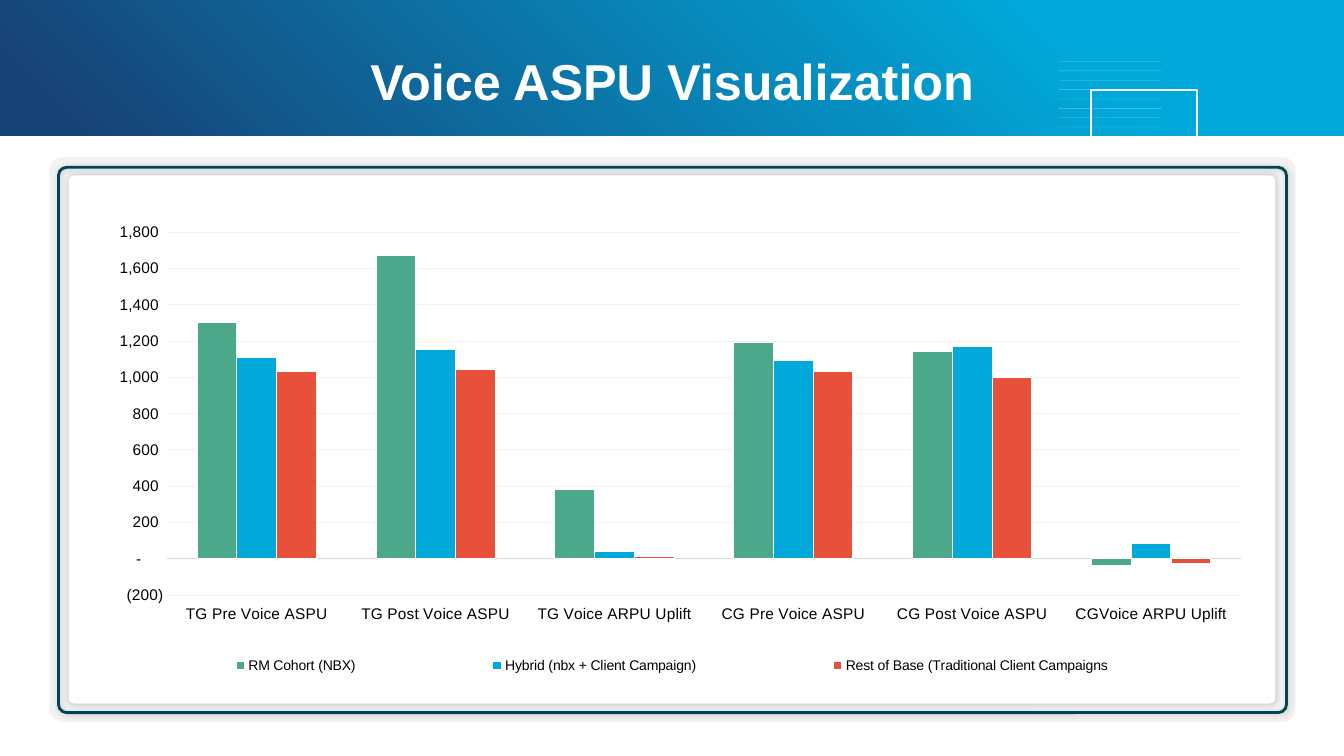
import pptx
import pptx.chart.data
import pptx.dml.color
import pptx.enum.chart
import pptx.enum.shapes
import pptx.enum.text
import pptx.oxml
import pptx.oxml.ns
import pptx.util
from lxml import etree
from pptx.util import Inches, Pt

FONT = "Arial"
COLORS = {
    "navy": "174276", "sky": "00A9DA", "white": "FFFFFF", "black": "000000",
    "mat": "F2F2F2", "frame": "004554", "axis": "D9D9D9",
    "green": "4CA88A", "red": "E7513C",
}
CATEGORIES = [
    "TG Pre Voice ASPU", "TG Post Voice ASPU", "TG Voice ARPU Uplift",
    "CG Pre Voice ASPU", "CG Post Voice ASPU", "CGVoice ARPU Uplift",
]
SERIES = [
    ("RM Cohort (NBX)", "green", (1300, 1670, 380, 1190, 1140, -40)),
    ("Hybrid (nbx + Client Campaign)", "sky", (1110, 1150, 40, 1090, 1170, 80)),
    ("Rest of Base (Traditional Client Campaigns", "red", (1030, 1040, 10, 1030, 1000, -30)),
]
NUMBER_FORMAT = '_(* #,##0_);_(* \\(#,##0\\);_(* "-"??_);_(@_)'
NAMESPACE = pptx.oxml.ns.nsdecls("a")


def rgb(name):
    return pptx.dml.color.RGBColor.from_string(COLORS[name])


def style_line(line, color, width):
    line.color.rgb = rgb(color)
    line.width = Pt(width)


def style_font(font, size, color="black", bold=False):
    font.name, font.size, font.bold = FONT, Pt(size), bold
    font.color.rgb = rgb(color)


def add_box(slide, box, fill=None, line=None, width=1, radius=None, shadow=False):
    kinds = pptx.enum.shapes.MSO_SHAPE
    kind = kinds.RECTANGLE if radius is None else kinds.ROUNDED_RECTANGLE
    shape = slide.shapes.add_shape(kind, *map(Inches, box))
    shape.shadow.inherit = False
    if radius is not None:
        shape.adjustments[0] = radius
    if fill:
        shape.fill.solid()
        shape.fill.fore_color.rgb = rgb(fill)
    else:
        shape.fill.background()
    if line:
        style_line(shape.line, line, width)
    else:
        shape.line.fill.background()
    if shadow:
        effects = shape._element.spPr.find(pptx.oxml.ns.qn("a:effectLst"))
        effects.append(pptx.oxml.parse_xml(
            f'<a:outerShdw {NAMESPACE} blurRad="{Pt(4)}" dist="{Pt(1)}" dir="2700000" '
            f'rotWithShape="0"><a:srgbClr val="{COLORS["black"]}">'
            '<a:alpha val="20000"/></a:srgbClr></a:outerShdw>'))
    return shape


def add_background(slide, box, banner_height):
    left, top, width, height = box
    # Radial gradient spreading over the whole slide
    backdrop = add_box(slide, box, "navy")
    properties = backdrop._element.spPr
    properties.xfrm.set("flipH", "1")
    stops = "".join(
        f'<a:gs pos="{position * 1000}"><a:srgbClr val="{COLORS[color]}"/></a:gs>'
        for position, color in ((33, "navy"), (85, "sky"), (100, "sky")))
    gradient = pptx.oxml.parse_xml(
        f'<a:gradFill {NAMESPACE} rotWithShape="1"><a:gsLst>{stops}</a:gsLst>'
        '<a:path path="circle"><a:fillToRect t="100000" r="100000"/></a:path></a:gradFill>')
    properties.replace(properties.find(pptx.oxml.ns.qn("a:solidFill")), gradient)
    # White page below the banner
    add_box(slide, (left, top + banner_height, width, height - banner_height), "white")


def add_ornament(slide, left, top):
    # Faint parallel lines
    for index in range(11):
        y = Inches(top + index * 0.093)
        line = slide.shapes.add_connector(
            pptx.enum.shapes.MSO_CONNECTOR.STRAIGHT, Inches(left), y, Inches(left + 1.02), y)
        style_line(line.line, "white", 0.25)
        color = line._element.spPr.find(".//" + pptx.oxml.ns.qn("a:srgbClr"))
        etree.SubElement(color, pptx.oxml.ns.qn("a:alpha"), val="40000")
        etree.SubElement(line._element.spPr, pptx.oxml.ns.qn("a:effectLst"))
    # Square outline
    add_box(slide, (left + 0.32, top + 0.28, 1.05, 1.05), line="white", width=1.19)


def add_title(slide, box, text):
    frame = slide.shapes.add_textbox(*map(Inches, box)).text_frame
    frame.word_wrap = True
    frame.margin_top = Inches(0.11)
    frame.text = text
    paragraph = frame.paragraphs[0]
    paragraph.alignment = pptx.enum.text.PP_ALIGN.CENTER
    style_font(paragraph.runs[0].font, 36, "white", True)


def add_panel(slide, box):
    left, top, width, height = box
    add_box(slide, box, "mat", radius=0.023)
    add_box(slide, (left + 0.19, top + 0.18, width - 0.39, height - 0.36),
            "white", radius=0.011, shadow=True)
    add_box(slide, (left + 0.09, top + 0.1, width - 0.18, height - 0.19),
            line="frame", width=2, radius=0.015, shadow=True)
    add_chart(slide, (left + 0.3, top + 0.25, width - 0.61, height - 0.58))


def set_layout(part, after, x, y, width, height):
    """Place a chart part by fractions of the chart area."""
    for old in part.findall(pptx.oxml.ns.qn("c:layout")):
        part.remove(old)
    values = (("xMode", "edge"), ("yMode", "edge"), ("x", x), ("y", y),
              ("w", width), ("h", height))
    layout = etree.Element(pptx.oxml.ns.qn("c:layout"))
    manual = etree.SubElement(layout, pptx.oxml.ns.qn("c:manualLayout"))
    for name, value in values:
        etree.SubElement(manual, pptx.oxml.ns.qn("c:" + name), val=str(value))
    if after is None:
        part.insert(0, layout)
    else:
        part.find(pptx.oxml.ns.qn(after)).addnext(layout)


def add_chart(slide, box):
    data = pptx.chart.data.CategoryChartData()
    data.categories = CATEGORIES
    for name, _, values in SERIES:
        data.add_series(name, values)
    chart = slide.shapes.add_chart(
        pptx.enum.chart.XL_CHART_TYPE.COLUMN_CLUSTERED, *map(Inches, box), data).chart
    chart.has_title = False
    style_font(chart.font, 10)

    # Columns
    plot = chart.plots[0]
    plot.gap_width, plot.overlap, plot.vary_by_categories = 150, 0, False
    for series, (_, color, _) in zip(plot.series, SERIES):
        series.invert_if_negative = False
        series.format.fill.solid()
        series.format.fill.fore_color.rgb = rgb(color)
        style_line(series.format.line, "white", 0.75)

    # Axes
    for axis in (chart.category_axis, chart.value_axis):
        axis.major_tick_mark = axis.minor_tick_mark = pptx.enum.chart.XL_TICK_MARK.NONE
        style_font(axis.tick_labels.font, 11)
    chart.category_axis.tick_label_position = pptx.enum.chart.XL_TICK_LABEL_POSITION.LOW
    style_line(chart.category_axis.format.line, "axis", 0.25)
    value_axis = chart.value_axis
    value_axis.minimum_scale, value_axis.maximum_scale, value_axis.major_unit = -200, 1800, 200
    value_axis.format.line.fill.background()
    style_line(value_axis.major_gridlines.format.line, "mat", 0.25)
    value_axis.tick_labels.number_format = NUMBER_FORMAT
    value_axis.tick_labels.number_format_is_linked = False

    # Legend and placement
    chart.has_legend = True
    chart.legend.position = pptx.enum.chart.XL_LEGEND_POSITION.BOTTOM
    chart.legend.include_in_layout = False
    style_font(chart.legend.font, 10)
    set_layout(chart.legend._element, "c:legendPos", 0.02, 0.92, 0.96, 0.07)
    plot_area = chart._chartSpace.chart.plotArea
    set_layout(plot_area, None, 0.03, 0.08, 0.95, 0.79)


def main():
    presentation = pptx.Presentation()
    presentation.slide_width, presentation.slide_height = Inches(13.33), Inches(7.5)
    slide = presentation.slides.add_slide(presentation.slide_layouts[6])
    add_background(slide, (0, 0, 13.33, 7.5), 1.35)
    add_ornament(slide, 10.5, 0.61)
    add_title(slide, (0.49, 0.39, 12.36, 0.64), "Voice ASPU Visualization")
    add_panel(slide, (0.49, 1.56, 12.36, 5.6))
    presentation.save("out.pptx")


if __name__ == "__main__":
    main()
